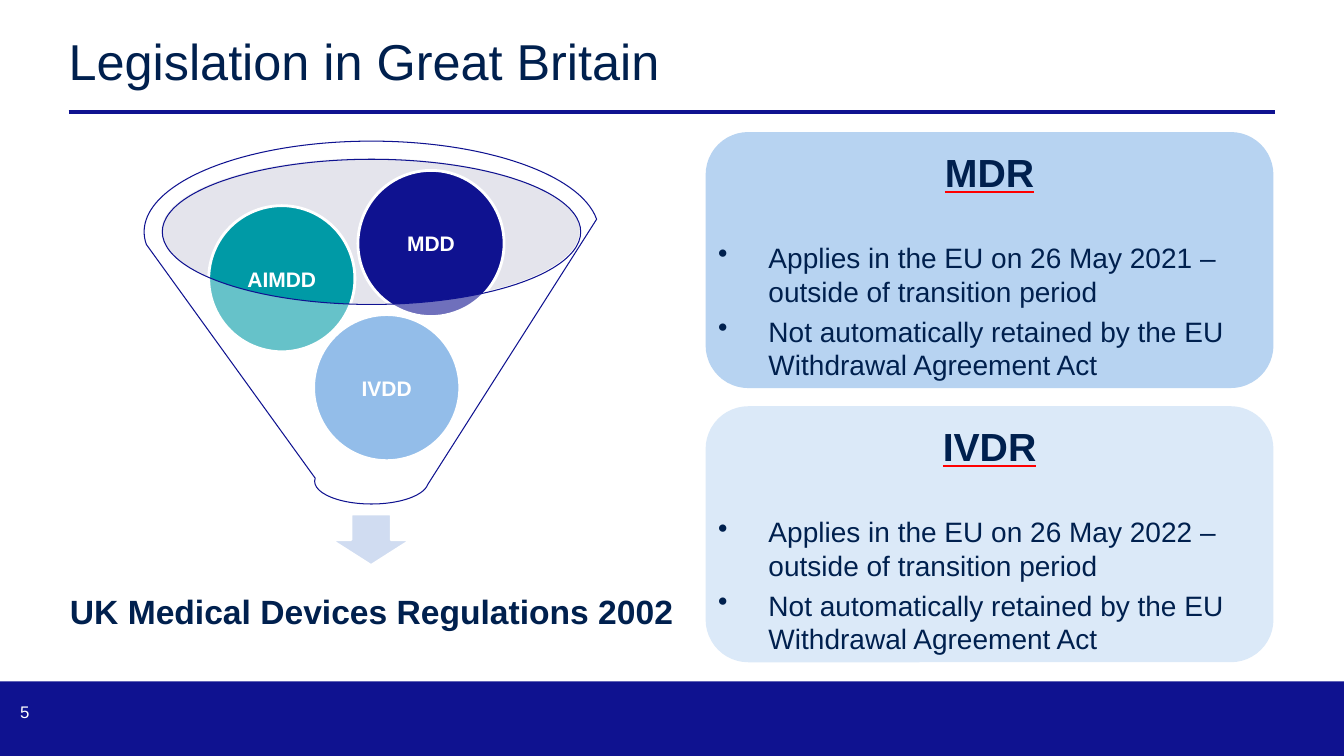
from typing import NamedTuple

from lxml.etree import SubElement
from pptx import Presentation
from pptx.dml.color import RGBColor
from pptx.enum.shapes import MSO_CONNECTOR, MSO_SHAPE
from pptx.enum.text import MSO_ANCHOR, PP_ALIGN
from pptx.oxml import parse_xml
from pptx.oxml.ns import nsdecls, qn
from pptx.util import Inches, Pt

NAVY = RGBColor(0x0F, 0x12, 0x90)
INK = RGBColor(0x00, 0x20, 0x4E)
WHITE = RGBColor(0xFF, 0xFF, 0xFF)
TEAL = RGBColor(0x00, 0x9A, 0xA6)
SKY = RGBColor(0x4B, 0x92, 0xDB)
CARD_BLUE = RGBColor(0xB7, 0xD3, 0xF1)
CARD_PALE = RGBColor(0xDB, 0xE9, 0xF8)
ARROW_BLUE = RGBColor(0xD0, 0xDC, 0xF1)
MOUTH_GREY = RGBColor(0xBD, 0xBD, 0xD1)

TITLE_FONT = {"size": Pt(36), "bold": False}
NUMBER_FONT = {"size": Pt(12)}
CAPTION_FONT = {"size": Pt(24), "bold": True}
CIRCLE_FONT = {"size": Pt(15), "bold": True}
HEADING_FONT = {"size": Pt(28), "bold": True, "underline": True}
BULLET_FONT = {"size": Pt(20)}


class Box(NamedTuple):
    """A rectangle whose inner areas are given in percent of its size."""
    left: int
    top: int
    width: int
    height: int

    def area(self, left, top, width, height):
        """Return the box at the given percentages of this one."""
        return Box(int(self.left + self.width * left / 100),
                   int(self.top + self.height * top / 100),
                   int(self.width * width / 100),
                   int(self.height * height / 100))


def format_frame(frame, anchor, left=0, top=0):
    """Set the anchor and insets of a text frame and let it wrap."""
    settings = {"word_wrap": True, "vertical_anchor": anchor, "margin_left": left,
                "margin_top": top, "margin_right": 0, "margin_bottom": 0}
    for name, value in settings.items():
        setattr(frame, name, value)


def write(paragraph, text, font, color, alignment=PP_ALIGN.LEFT):
    """Put one formatted run into a paragraph and return the run."""
    paragraph.alignment = alignment
    run = paragraph.add_run()
    run.text = text
    for name, value in {"name": "Arial", **font}.items():
        setattr(run.font, name, value)
    run.font.color.rgb = color
    return run


def add_filled(slide, preset, box, color, line=None, width=0, opacity=None):
    """Add a flat preset shape, optionally outlined or see-through."""
    shape = slide.shapes.add_shape(preset, *box)
    shape.shadow.inherit = False
    shape.fill.solid()
    shape.fill.fore_color.rgb = color
    if opacity is not None:
        color_element = shape.element.spPr.find(qn("a:solidFill"))[0]
        SubElement(color_element, qn("a:alpha"), val=str(opacity * 1000))
    if line is None:
        shape.line.fill.background()
    else:
        shape.line.color.rgb = line
        shape.line.width = Pt(width)
    return shape


def add_header(slide, box, text):
    """Place the title with the rule below it."""
    title = slide.shapes.title
    for name, value in box.area(0, 0, 100, 76.5)._asdict().items():
        setattr(title, name, value)
    format_frame(title.text_frame, MSO_ANCHOR.TOP)
    write(title.text_frame.paragraphs[0], text, TITLE_FONT, INK)
    bottom = box.top + box.height
    rule = slide.shapes.add_connector(
        MSO_CONNECTOR.STRAIGHT, box.left, bottom, box.left + box.width, bottom)
    rule.line.color.rgb = NAVY
    rule.line.width = Pt(3)
    SubElement(rule.element.spPr, qn("a:effectLst"))


def add_footer(slide, box, number):
    """Place the footer band with the slide number."""
    add_filled(slide, MSO_SHAPE.RECTANGLE, box, NAVY)
    frame = slide.shapes.add_textbox(*box.area(0, 0, 5.93, 81)).text_frame
    format_frame(frame, MSO_ANCHOR.MIDDLE, left=Inches(0.2))
    write(frame.paragraphs[0], number, NUMBER_FONT, WHITE)


def add_funnel(slide, box, circles):
    """Place the funnel, the circles falling into it and the arrow below."""
    add_filled(slide, MSO_SHAPE.OVAL, box.area(3.77, 4.72, 92.02, 40),
               MOUTH_GREY, opacity=40)
    add_filled(slide, MSO_SHAPE.DOWN_ARROW, box.area(41.02, 102.78, 17.74, 14.17),
               ARROW_BLUE, WHITE, 2)
    for text, color, left, top in circles:
        circle = add_filled(slide, MSO_SHAPE.OVAL, box.area(left, top, 32.15, 40.28),
                            color, WHITE, 2)
        format_frame(circle.text_frame, MSO_ANCHOR.MIDDLE)
        write(circle.text_frame.paragraphs[0], text, CIRCLE_FONT, WHITE,
              PP_ALIGN.CENTER)
    add_filled(slide, MSO_SHAPE.FUNNEL, box, WHITE, NAVY, 0.75, opacity=40)


def add_caption(slide, box, text):
    """Place the result that the funnel leads to."""
    frame = slide.shapes.add_textbox(*box).text_frame
    format_frame(frame, MSO_ANCHOR.MIDDLE)
    paragraph = frame.paragraphs[0]
    paragraph.line_spacing = 0.9
    write(paragraph, text, CAPTION_FONT, INK, PP_ALIGN.CENTER)


def add_card(slide, box, color, heading, bullets):
    """Place a rounded card with a heading and bullets."""
    card = add_filled(slide, MSO_SHAPE.ROUNDED_RECTANGLE, box, color)
    frame = card.text_frame
    format_frame(frame, MSO_ANCHOR.TOP, top=Inches(0.04))
    run = write(frame.paragraphs[0], heading, HEADING_FONT, INK, PP_ALIGN.CENTER)
    underline = parse_xml(f'<a:uFill {nsdecls("a")}><a:solidFill>'
                          '<a:srgbClr val="FF0000"/></a:solidFill></a:uFill>')
    run._r.get_or_add_rPr().find(qn("a:latin")).addprevious(underline)
    for index, text in enumerate(bullets):
        paragraph = frame.add_paragraph()
        properties = paragraph._p.get_or_add_pPr()
        properties.set("marL", str(Inches(0.5)))
        properties.set("indent", str(-Inches(0.5)))
        SubElement(properties, qn("a:buChar"), char="•")
        paragraph.space_before = Pt(4.6 if index else 32)
        write(paragraph, text, BULLET_FONT, INK)


def main():
    """Build the slide and save it."""
    presentation = Presentation()
    presentation.slide_width = Inches(13.33)
    presentation.slide_height = Inches(7.5)
    slide = presentation.slides.add_slide(presentation.slide_layouts[5])
    page = Box(0, 0, presentation.slide_width, presentation.slide_height)

    add_footer(slide, page.area(0, 90.13, 100, 9.87), "5")
    add_header(slide, page.area(5.1, 4, 89.8, 10.8), "Legislation in Great Britain")
    cards = [("MDR", "2021", CARD_BLUE), ("IVDR", "2022", CARD_PALE)]
    for row, (heading, year, color) in enumerate(cards):
        add_card(slide, page.area(52.5, 17.47 + row * 36.27, 42.25, 33.87),
                 color, heading,
                 [f"Applies in the EU on 26 May {year} – outside of transition period",
                  "Not automatically retained by the EU Withdrawal Agreement Act"])
    add_caption(slide, page.area(1.5, 74.67, 52.29, 12.93),
                "UK Medical Devices Regulations 2002")
    add_funnel(slide, page.area(10.73, 18.67, 33.83, 48),
               [("IVDD", SKY, 37.25, 47.78),
                ("AIMDD", TEAL, 14.19, 17.78),
                ("MDD", NAVY, 47, 8.06)])
    presentation.save("out.pptx")


if __name__ == "__main__":
    main()
